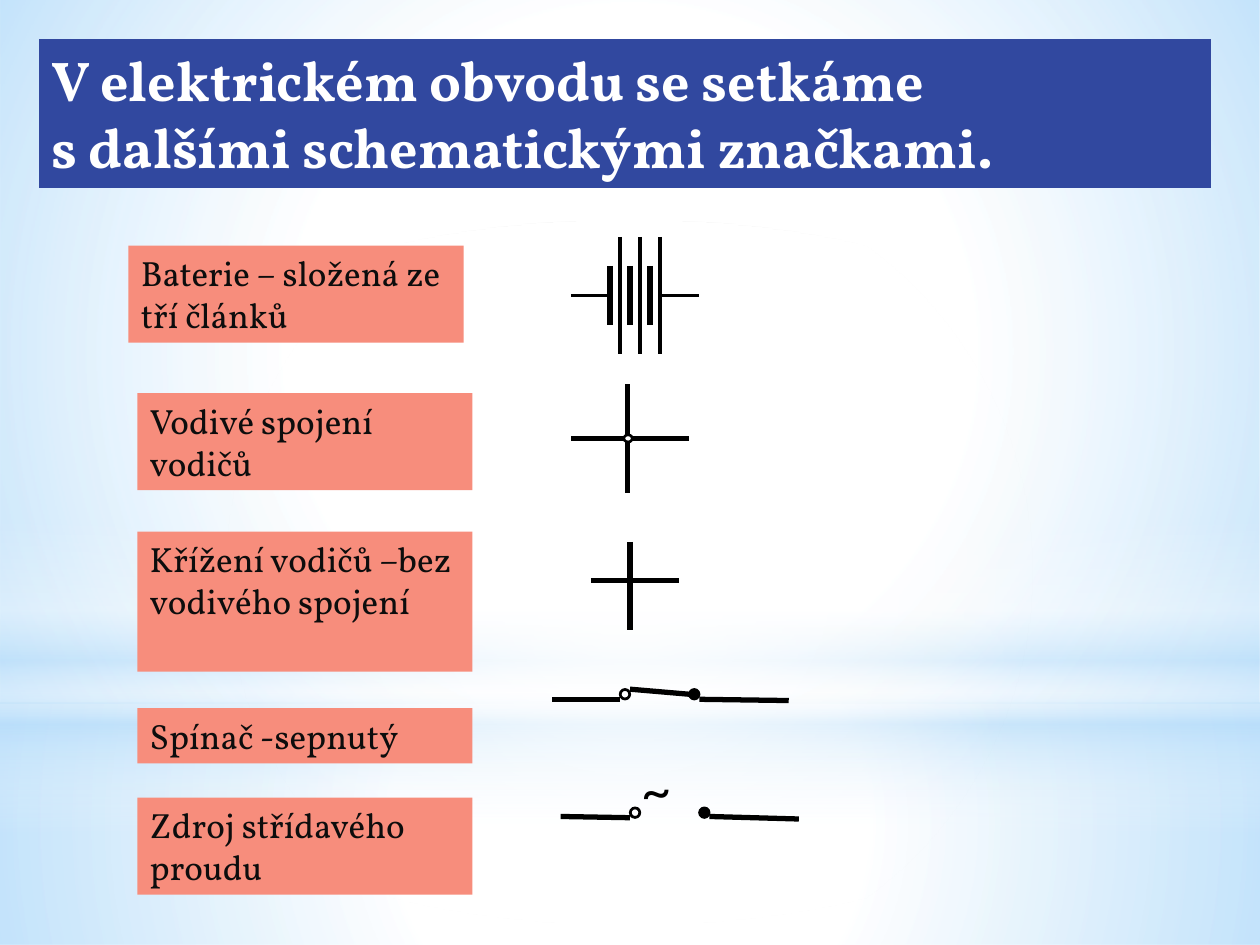
from lxml import etree
from pptx import Presentation
from pptx.dml.color import RGBColor
from pptx.enum import shapes, text
from pptx.oxml.ns import qn
from pptx.util import Inches, Pt

COLORS = {"white": "FFFFFF", "sky": "B4DCFA", "title": "31489F",
          "label": "F78D7C", "ink": "0D0D0D", "black": "000000"}
SHAPE = shapes.MSO_SHAPE

TITLE = ["V elektrickém obvodu se setkáme", "s dalšími schematickými značkami."]

# text, left, top, height
LABELS = [
    ("Baterie – složená ze tří článků", 1.02, 1.95, 0.77),
    ("Vodivé spojení vodičů", 1.09, 3.12, 0.77),
    ("Křížení vodičů –bez vodivého spojení", 1.09, 4.22, 1.11),
    ("Spínač -sepnutý", 1.09, 5.62, 0.44),
    ("Zdroj střídavého proudu", 1.09, 6.33, 0.77),
]
LABEL_WIDTH = 2.66

# preset, box, stops (position %, colour, opacity %), angle or None for radial
BACKDROP = [
    (SHAPE.RECTANGLE, (0, 5.58, 10, 1.92),
     [(0, "white", 91), (37, "white", 76), (100, "sky", 79)], None),
    (SHAPE.RECTANGLE, (0, 0, 10, 5.58),
     [(0, "white", 89), (48, "white", 62), (100, "sky", 79)], None),
    (SHAPE.RECTANGLE, (0, 4.12, 10, 2.5),
     [(0, "white", 0), (29, "white", 30), (45, "sky", 40),
      (55, "white", 26), (65, "sky", 60), (100, "white", 0)], 90),
    (SHAPE.OVAL, (0, 1.75, 10, 5.58), [(0, "white", 100), (56, "white", 0)], None),
]

# Battery: three cells, each a short thick plate and a long thin one
CELL_LEFT, CELL_STEP, PLATE_GAP, AXIS = 4.84, 0.16, 0.08, 2.345
battery = [(4.53, AXIS, CELL_LEFT, AXIS, 2), (5.23, AXIS, 5.55, AXIS, 2)]
for cell in range(3):
    x = CELL_LEFT + cell * CELL_STEP
    for plate_x, half, width in ((x, 0.235, 3.75), (x + PLATE_GAP, 0.465, 2.5)):
        battery.append((plate_x, AXIS - half, plate_x, AXIS + half, width))

# lines (x1, y1, x2, y2, points) and terminals (preset, left, top, width, height)
SYMBOLS = {
    "battery": (battery, []),
    "joined wires": ([(4.95, 3.48, 4.53, 3.48, 3), (4.98, 3.45, 4.98, 3.05, 3),
                      (5.47, 3.48, 5.02, 3.48, 3), (4.98, 3.51, 4.98, 3.91, 3)],
                     [(SHAPE.DONUT, 4.95, 3.45, 0.07, 0.06)]),
    "crossing wires": ([(5, 4.3, 5, 5, 3), (4.69, 4.61, 5.39, 4.61, 3)], []),
    "closed switch": ([(5, 5.47, 5.47, 5.51, 3), (5.55, 5.55, 6.26, 5.56, 3),
                       (4.92, 5.55, 4.38, 5.55, 3)],
                      [(SHAPE.DONUT, 4.92, 5.47, 0.08, 0.08),
                       (SHAPE.OVAL, 5.47, 5.47, 0.08, 0.08)]),
    "AC source": ([(5.63, 6.48, 6.34, 6.5, 3), (5, 6.49, 4.45, 6.48, 3)],
                  [(SHAPE.DONUT, 5, 6.41, 0.08, 0.08),
                   (SHAPE.OVAL, 5.55, 6.41, 0.08, 0.08)]),
}


def rgb(name):
    return RGBColor.from_string(COLORS[name])


def inches(values):
    return [Inches(v) for v in values]


def write(shape, lines, *, size, color, font="Vollkorn", bold=False):
    frame = shape.text_frame
    frame.word_wrap = True
    frame.auto_size = text.MSO_AUTO_SIZE.SHAPE_TO_FIT_TEXT
    frame.vertical_anchor = text.MSO_ANCHOR.TOP
    for i, line in enumerate(lines):
        paragraph = frame.add_paragraph() if i else frame.paragraphs[0]
        paragraph.alignment = text.PP_ALIGN.LEFT
        run = paragraph.add_run()
        run.text = line
        run.font.name, run.font.size, run.font.bold = font, Pt(size), bold
        run.font.color.rgb = rgb(color)


def add_solid(owner, preset, box, color, outline=None):
    shape = owner.add_shape(preset, *inches(box))
    shape.shadow.inherit = False
    shape.fill.solid()
    shape.fill.fore_color.rgb = rgb(color)
    if outline:
        shape.line.color.rgb = rgb(color)
        shape.line.width = Pt(outline)
    else:
        shape.line.fill.background()
    return shape


def add_wire(owner, x1, y1, x2, y2, width):
    wire = owner.add_connector(shapes.MSO_CONNECTOR.STRAIGHT, *inches((x1, y1, x2, y2)))
    wire.line.color.rgb = rgb("black")
    wire.line.width = Pt(width)
    etree.SubElement(wire._element.spPr, qn("a:effectLst"))


def add_gradient(owner, preset, box, stops, angle):
    shape = add_solid(owner, preset, box, "white")
    gradient = etree.Element(qn("a:gradFill"), rotWithShape="1")
    stop_list = etree.SubElement(gradient, qn("a:gsLst"))
    for position, color, opacity in stops:
        stop = etree.SubElement(stop_list, qn("a:gs"), pos=str(position * 1000))
        tint = etree.SubElement(stop, qn("a:srgbClr"), val=COLORS[color])
        etree.SubElement(tint, qn("a:alpha"), val=str(opacity * 1000))
    if angle is None:
        radial = etree.SubElement(gradient, qn("a:path"), path="circle")
        etree.SubElement(radial, qn("a:fillToRect"),
                         **dict.fromkeys("ltrb", "50000"))
    else:
        etree.SubElement(gradient, qn("a:lin"), ang=str(angle * 60000), scaled="0")
    properties = shape._element.spPr
    properties.replace(properties.find(qn("a:solidFill")), gradient)


def main():
    prs = Presentation()
    prs.slide_width, prs.slide_height = Inches(10), Inches(7.5)
    slide = prs.slides.add_slide(prs.slide_layouts[5])
    canvas = slide.shapes

    # Backdrop
    for layer in BACKDROP:
        add_gradient(canvas, *layer)

    # Title, raised above the backdrop
    title = canvas.title
    title.left, title.top, title.width, title.height = inches((0.31, 0.31, 9.3, 1.18))
    title.fill.solid()
    title.fill.fore_color.rgb = rgb("title")
    write(title, TITLE, size=32, color="white", bold=True)
    title._element.getparent().append(title._element)

    # Labels
    for label, left, top, height in LABELS:
        box = add_solid(canvas, SHAPE.RECTANGLE, (left, top, LABEL_WIDTH, height), "label")
        write(box, [label], size=20, color="ink")

    # Circuit symbols, one group each
    for wires, terminals in SYMBOLS.values():
        symbol = canvas.add_group_shape().shapes
        for wire in wires:
            add_wire(symbol, *wire)
        for preset, *place in terminals:
            terminal = add_solid(symbol, preset, place, "black", outline=1.25)
            if preset == SHAPE.DONUT:
                terminal.adjustments[0] = 0.055

    # Alternating current sign
    sign = canvas.add_textbox(*inches((5, 5.94, 0.47, 0.64)))
    write(sign, ["~"], size=32, color="black", font="Calibri")

    prs.save("out.pptx")


if __name__ == "__main__":
    main()
